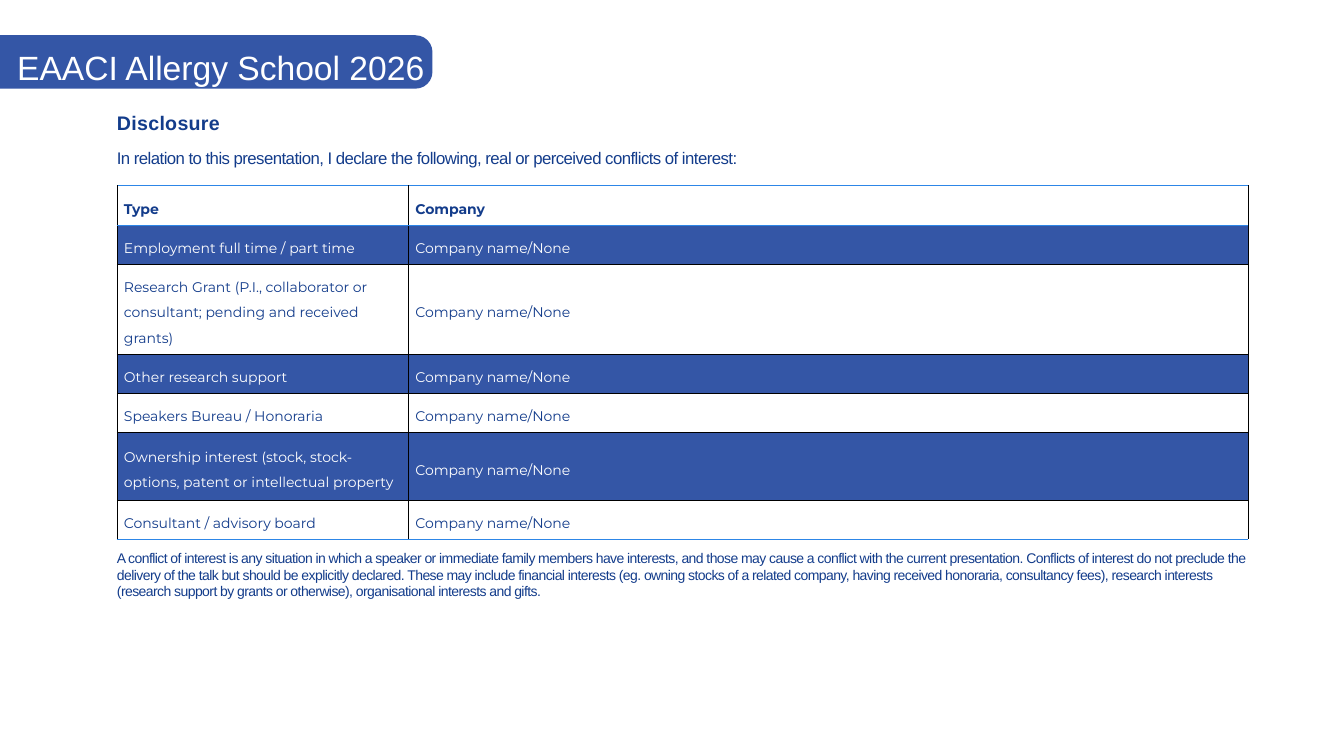
from lxml import etree
from pptx import Presentation
from pptx.dml.color import RGBColor
from pptx.enum.shapes import MSO_SHAPE
from pptx.enum.text import MSO_ANCHOR, MSO_AUTO_SIZE, PP_ALIGN
from pptx.oxml.ns import qn
from pptx.util import Inches, Pt

ROUNDED = MSO_SHAPE.ROUNDED_RECTANGLE
MIDDLE, TOP = MSO_ANCHOR.MIDDLE, MSO_ANCHOR.TOP
NO_FIT = MSO_AUTO_SIZE.NONE
LEFT = PP_ALIGN.LEFT

COLORS = {"navy": "133C8B", "blue": "3456A6", "rule": "2D86E7",
          "white": "FFFFFF", "black": "000000"}

EVENT = "EAACI Allergy School 2026"
HEADING = "Disclosure"
INTRO = ("In relation to this presentation, I declare the following, "
         "real or perceived conflicts of interest:")
FOOTNOTE = (
    "A conflict of interest is any situation in which a speaker or immediate family "
    "members have interests, and those may cause a conflict with the current "
    "presentation. Conflicts of interest do not preclude the delivery of the talk but "
    "should be explicitly declared. These may include financial interests (eg. owning "
    "stocks of a related company, having received honoraria, consultancy fees), research "
    "interests (research support by grants or otherwise), organisational interests and "
    "gifts.")
HEADER = ("Type", "Company")
ANSWER = "Company name/None"
INTERESTS = [
    "Employment full time / part time",
    "Research Grant (P.I., collaborator or consultant; pending and received grants)",
    "Other research support",
    "Speakers Bureau / Honoraria",
    "Ownership interest (stock, stock-options, patent or intellectual property",
    "Consultant / advisory board",
]

SLIDE_W, SLIDE_H = 13.33, 7.5
MARGIN = 1.16
COLUMNS = (2.89, 8.33)
TABLE_TOP = 1.84
ROW_H, TALL_ROW_H = 0.39, 0.67
LONG_TEXT = 40
CELL_INSET = Inches(0.07)
BORDER_W = Pt(0.16)


def color(name):
    return RGBColor.from_string(COLORS[name])


def style(paragraph, size, leading, ink, face="Arial", bold=False):
    paragraph.line_spacing = Pt(leading)
    paragraph.alignment = LEFT
    font = paragraph.font
    font.name, font.size, font.bold = face, Pt(size), bold
    font.color.rgb = color(ink)


def fill_frame(frame, text, size, leading, ink, bold=False, tracking=0, anchor=TOP):
    frame.word_wrap = True
    frame.auto_size = NO_FIT
    frame.vertical_anchor = anchor
    frame.margin_left = frame.margin_right = frame.margin_top = frame.margin_bottom = 0
    frame.text = text
    paragraph = frame.paragraphs[0]
    style(paragraph, size, leading, ink, bold=bold)
    if tracking:
        paragraph.runs[0]._r.get_or_add_rPr().set("spc", str(tracking))


def add_borders(cell, top, bottom):
    properties = cell._tc.get_or_add_tcPr()
    sides = {"lnL": "black", "lnR": "black", "lnT": top, "lnB": bottom}
    for side, ink in sides.items():
        line = etree.SubElement(properties, qn(f"a:{side}"), w=str(int(BORDER_W)))
        solid = etree.SubElement(line, qn("a:solidFill"))
        etree.SubElement(solid, qn("a:srgbClr"), val=COLORS[ink])


def add_banner(slide):
    banner = slide.shapes.add_shape(
        ROUNDED, Inches(-0.67), Inches(0.35), Inches(4.96), Inches(0.53))
    banner.adjustments[0] = 0.317
    banner.shadow.inherit = False
    banner.fill.solid()
    banner.fill.fore_color.rgb = color("blue")
    banner.line.fill.background()
    title = slide.shapes.title
    title.left, title.top = Inches(0.17), Inches(0.39)
    title.width, title.height = Inches(4.58), Inches(0.45)
    fill_frame(title.text_frame, EVENT, 24, 35.5, "white", anchor=MIDDLE)
    banner.element.addnext(title.element)


def add_disclosures(slide):
    rows = [HEADER] + [(interest, ANSWER) for interest in INTERESTS]
    heights = [TALL_ROW_H if len(row[0]) > LONG_TEXT else ROW_H for row in rows]
    table = slide.shapes.add_table(
        len(rows), len(COLUMNS), Inches(MARGIN), Inches(TABLE_TOP),
        Inches(sum(COLUMNS)), Inches(sum(heights))).table
    table.first_row = table.horz_banding = False
    for column, width in zip(table.columns, COLUMNS):
        column.width = Inches(width)
    last = len(rows) - 1
    for r, row in enumerate(rows):
        table.rows[r].height = Inches(heights[r])
        banded = r % 2 == 1
        top = "rule" if r < 2 else "black"
        bottom = "rule" if r in (0, last) else "black"
        for c, text in enumerate(row):
            cell = table.cell(r, c)
            cell.text = text
            cell.vertical_anchor = MIDDLE
            cell.margin_left = cell.margin_right = CELL_INSET
            cell.margin_top = cell.margin_bottom = CELL_INSET
            add_borders(cell, top, bottom)
            if banded:
                cell.fill.solid()
                cell.fill.fore_color.rgb = color("blue")
            else:
                cell.fill.background()
            style(cell.text_frame.paragraphs[0], 10, 18,
                  "white" if banded else "navy", "Montserrat", r == 0)


def add_note(slide, top, width, height, text, size, leading, bold, tracking):
    note = slide.shapes.add_textbox(
        Inches(MARGIN), Inches(top), Inches(width), Inches(height))
    fill_frame(note.text_frame, text, size, leading, "navy", bold, tracking)


def main():
    deck = Presentation()
    deck.slide_width, deck.slide_height = Inches(SLIDE_W), Inches(SLIDE_H)
    slide = deck.slides.add_slide(deck.slide_layouts[5])
    add_disclosures(slide)
    add_note(slide, 1.02, 3.01, 0.3, HEADING, 14, 22.7, True, 20)
    add_note(slide, 1.5, 8.56, 0.17, INTRO, 12, 12, False, -40)
    add_note(slide, 5.45, sum(COLUMNS), 0.5, FOOTNOTE, 10, 12, False, -40)
    add_banner(slide)
    deck.save("out.pptx")


if __name__ == "__main__":
    main()
